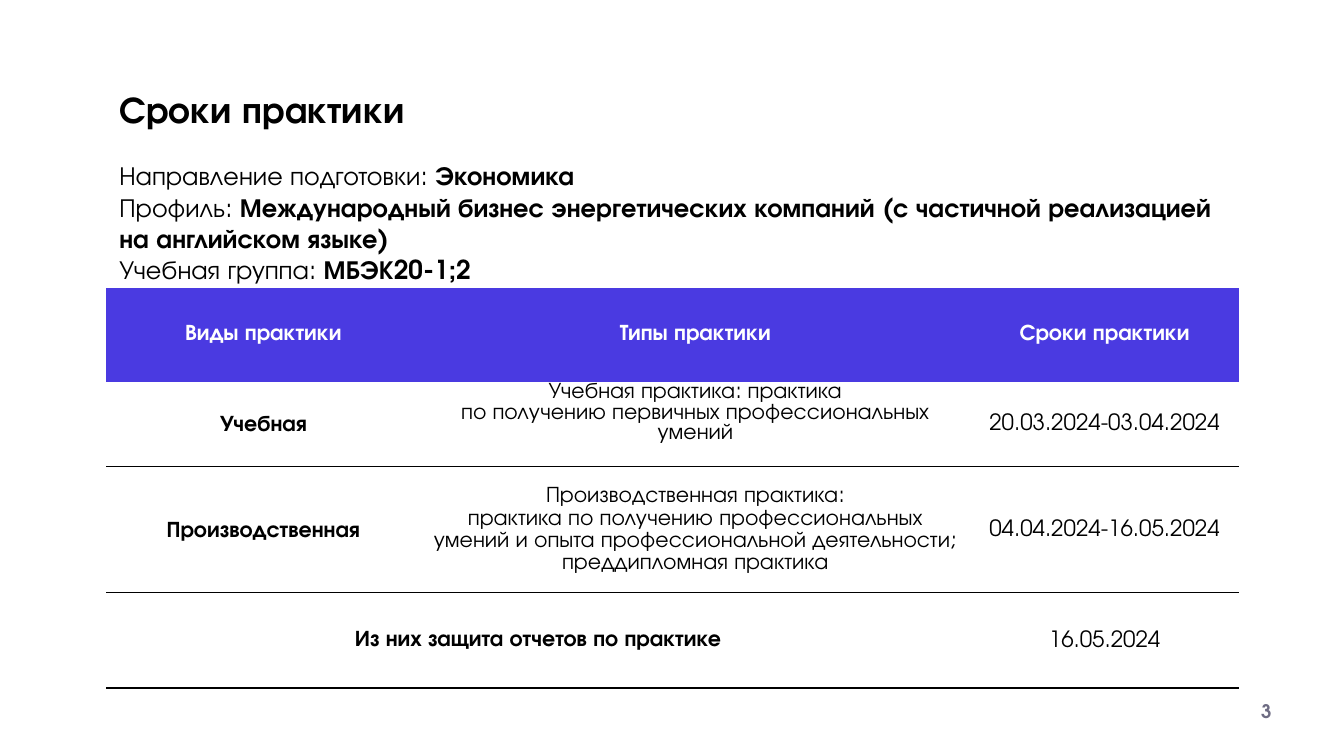
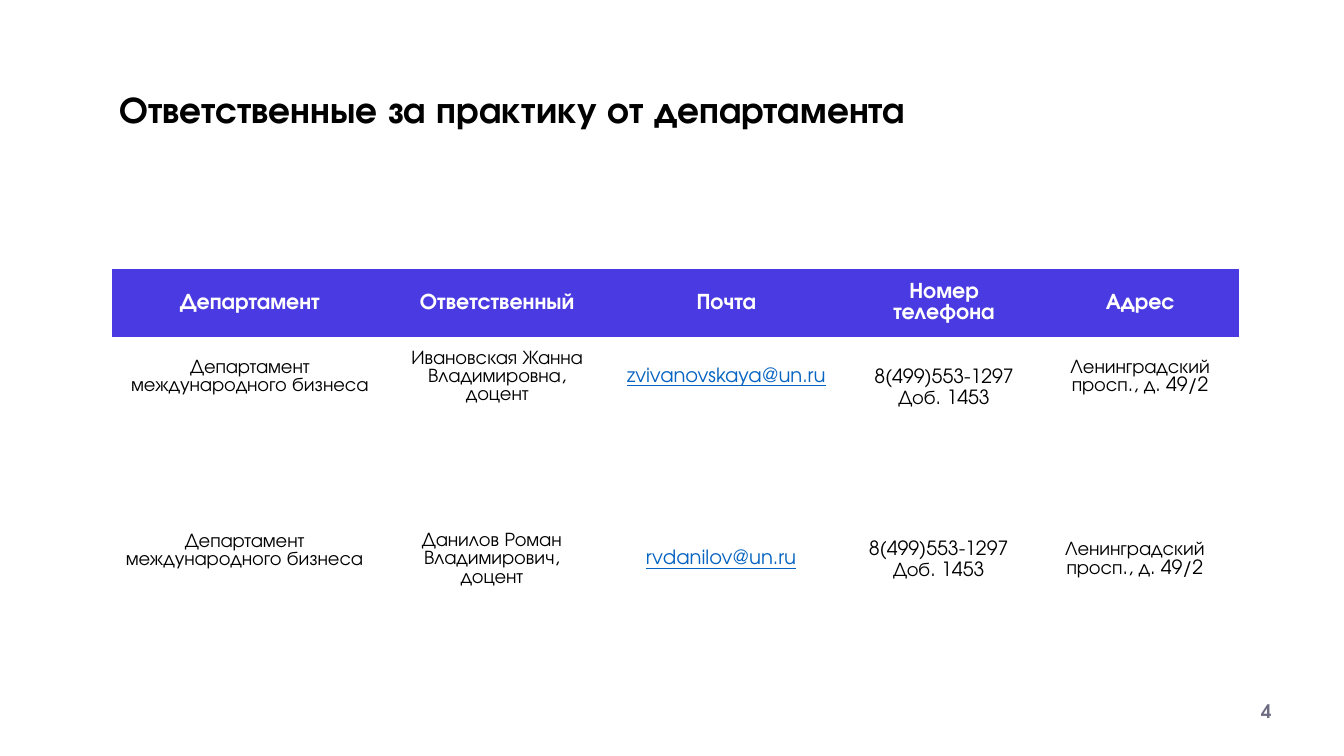
from lxml import etree
from pptx import Presentation
from pptx.dml.color import RGBColor
from pptx.enum import text
from pptx.oxml.ns import qn
from pptx.util import Inches, Pt

FONT = "TeX Gyre Adventor"
BLACK, WHITE, INDIGO, GREY, BLUE = "000000", "FFFFFF", "4A3AE1", "6E6C83", "0563C1"
LEFT, WIDTH = 0.79, 8.43
NO_STYLE = "{2D5ABB26-0587-4C30-8999-92F81FD0307C}"
ROOMY = (0.1, 0.1, 0.1, 0.1)
LOW = (0.1, 0.02, 0.1, 0.02)
FLUSH = (0.07, 0, 0.07, 0)
TIGHT = (0.04, 0.04, 0.04, 0.04)
MIDDLE, TOP = text.MSO_ANCHOR.MIDDLE, text.MSO_ANCHOR.TOP


def color(value):
    return RGBColor.from_string(value)


def set_margins(target, margins):
    (target.margin_left, target.margin_top,
     target.margin_right, target.margin_bottom) = map(Inches, margins)


class Deck:
    def __init__(self):
        self.prs = Presentation()
        self.prs.slide_width = Inches(10)
        self.prs.slide_height = Inches(10) * 9 // 16
        self.slide = None

    def style(self, paragraph, size, ink=BLACK, bold=False, spacing=None,
              align=text.PP_ALIGN.LEFT):
        font = paragraph.font
        font.name, font.size, font.bold = FONT, Pt(size), bold
        font.color.rgb = color(ink)
        paragraph.line_spacing = spacing
        paragraph.alignment = align

    def new_slide(self, heading, number):
        self.slide = self.prs.slides.add_slide(self.prs.slide_layouts[5])
        # Title
        title = self.slide.shapes.title
        title.left, title.top = Inches(LEFT), Inches(0.46)
        title.width, title.height = Inches(WIDTH), Inches(0.67)
        frame = title.text_frame
        frame.text = heading
        frame.word_wrap = True
        frame.auto_size = text.MSO_AUTO_SIZE.NONE
        frame.vertical_anchor = TOP
        set_margins(frame, ROOMY)
        self.style(frame.paragraphs[0], 20, bold=True, spacing=1.25)
        # Slide number
        footer = self.box(5.5, 5.14, 4.06, 0.33)
        footer.vertical_anchor = MIDDLE
        page = footer.paragraphs[0]
        page.text = str(number)
        page.space_before = Pt(7.5)
        self.style(page, 10, GREY, True, 0.9, text.PP_ALIGN.RIGHT)

    def box(self, left, top, width, height):
        shape = self.slide.shapes.add_textbox(*map(Inches, (left, top, width, height)))
        shape.text_frame.word_wrap = True
        return shape.text_frame

    def facts(self, pairs, top, height):
        frame = self.box(LEFT, top, WIDTH, height)
        frame.auto_size = text.MSO_AUTO_SIZE.SHAPE_TO_FIT_TEXT
        for i, (label, value) in enumerate(pairs):
            line = frame.add_paragraph() if i else frame.paragraphs[0]
            self.style(line, 14, spacing=None if i else 1.25)
            line.add_run().text = label + ": "
            answer = line.add_run()
            answer.text = value
            answer.font.bold = True

    def table(self, left, top, widths, heights):
        frame = self.slide.shapes.add_table(
            len(heights), len(widths), Inches(left), Inches(top),
            Inches(sum(widths)), Inches(sum(heights)))
        table = frame.table
        table.first_row = table.horz_banding = False
        table._tbl.tblPr.find(qn("a:tableStyleId")).text = NO_STYLE
        for column, width in zip(table.columns, widths):
            column.width = Inches(width)
        for row, height in zip(table.rows, heights):
            row.height = Inches(height)
        return table

    def cell(self, cell, words, size=12, ink=BLACK, bold=False, spacing=None,
             margins=ROOMY, fill=None, underline=False, anchor=MIDDLE):
        cell.text = words
        cell.vertical_anchor = anchor
        set_margins(cell, margins)
        if fill:
            cell.fill.solid()
            cell.fill.fore_color.rgb = color(fill)
        else:
            cell.fill.background()
        for paragraph in cell.text_frame.paragraphs:
            self.style(paragraph, size, ink, bold, spacing, text.PP_ALIGN.CENTER)
            if underline:
                paragraph.font.underline = True

    def header(self, table, labels, margins=ROOMY):
        for cell, label in zip(table.rows[0].cells, labels):
            self.cell(cell, label, ink=WHITE, bold=True, fill=INDIGO, margins=margins)

    def rule(self, cell, side, points):
        line = etree.Element(qn("a:" + side), w=str(Pt(points)))
        fill = etree.SubElement(line, qn("a:solidFill"))
        etree.SubElement(fill, qn("a:srgbClr"), val=BLACK)
        cell._tc.get_or_add_tcPr().insert(0, line)

    def contact(self, row, values, margins, department_margins, phone_margins):
        department, person, mail, phone, address = row.cells
        self.cell(department, values[0], 10.5, margins=department_margins)
        self.cell(person, values[1], 10.5, margins=margins)
        self.cell(mail, values[2], 10.5, BLUE, margins=margins, underline=True)
        self.cell(phone, values[3], 10.5, spacing=1.15, margins=phone_margins)
        self.cell(address, values[4], 10.5, margins=margins)


def schedule(deck):
    deck.new_slide("Сроки практики", 3)
    deck.facts([
        ("Направление подготовки", "Экономика"),
        ("Профиль", "Международный бизнес энергетических компаний "
                    "(с частичной реализацией на английском языке)"),
        ("Учебная группа", "МБЭК20-1;2"),
    ], 1.08, 1.1)

    # Practice dates
    table = deck.table(LEFT, 2.14, [2.34, 4.09, 2], [0.7, 0.63, 0.94, 0.71])
    deck.header(table, ["Виды практики", "Типы практики", "Сроки практики"])
    practices = [
        ("Учебная",
         "Учебная практика: практика\n"
         "по получению первичных профессиональных умений",
         "20.03.2024-03.04.2024", None, TOP),
        ("Производственная",
         "Производственная практика:\n"
         "практика по получению профессиональных умений и опыта "
         "профессиональной деятельности; преддипломная практика",
         "04.04.2024-16.05.2024", 1.07, MIDDLE),
    ]
    for r, (kind, content, dates, spacing, anchor) in enumerate(practices, 1):
        deck.cell(table.cell(r, 0), kind, bold=True, spacing=1.14)
        deck.cell(table.cell(r, 1), content, spacing=spacing, margins=FLUSH,
                  anchor=anchor)
        deck.cell(table.cell(r, 2), dates, spacing=1.07)

    # Report defence
    table.cell(3, 0).merge(table.cell(3, 1))
    deck.cell(table.cell(3, 0), "Из них защита отчетов по практике", bold=True)
    deck.cell(table.cell(3, 2), "16.05.2024", spacing=1.07, margins=FLUSH)

    # Row rules
    for r in (1, 2, 3):
        for cell in table.rows[r].cells:
            deck.rule(cell, "lnB", 0.75 if r == 3 else 1)
            if r > 1:
                deck.rule(cell, "lnT", 1)


def contacts(deck):
    deck.new_slide("Ответственные за практику от департамента", 4)
    widths = [2.06, 1.62, 1.79, 1.45, 1.47]
    department = "Департамент международного бизнеса"
    phone = "8(499)553-1297\nДоб. 1453"
    address = "Ленинградский просп., д. 49/2"

    # First contact, under the header
    first = deck.table(0.83, 2, widths, [0.51, 0.59])
    deck.header(first, ["Департамент", "Ответственный", "Почта",
                        "Номер телефона", "Адрес"], LOW)
    deck.contact(first.rows[1],
                 [department, "Ивановская Жанна Владимировна, доцент",
                  "zvivanovskaya@un.ru", phone, address],
                 LOW, LOW, (0.04, 0.16, 0.04, 0))

    # Second contact
    second = deck.table(LEFT, 3.68, widths, [0.97])
    deck.contact(second.rows[0],
                 [department, "Данилов Роман Владимирович, доцент",
                  "rvdanilov@un.ru", phone, address],
                 ROOMY, (0.1, 0.1, 0.1, 0.23), TIGHT)


def main():
    deck = Deck()
    schedule(deck)
    contacts(deck)
    deck.prs.save("out.pptx")


if __name__ == "__main__":
    main()
